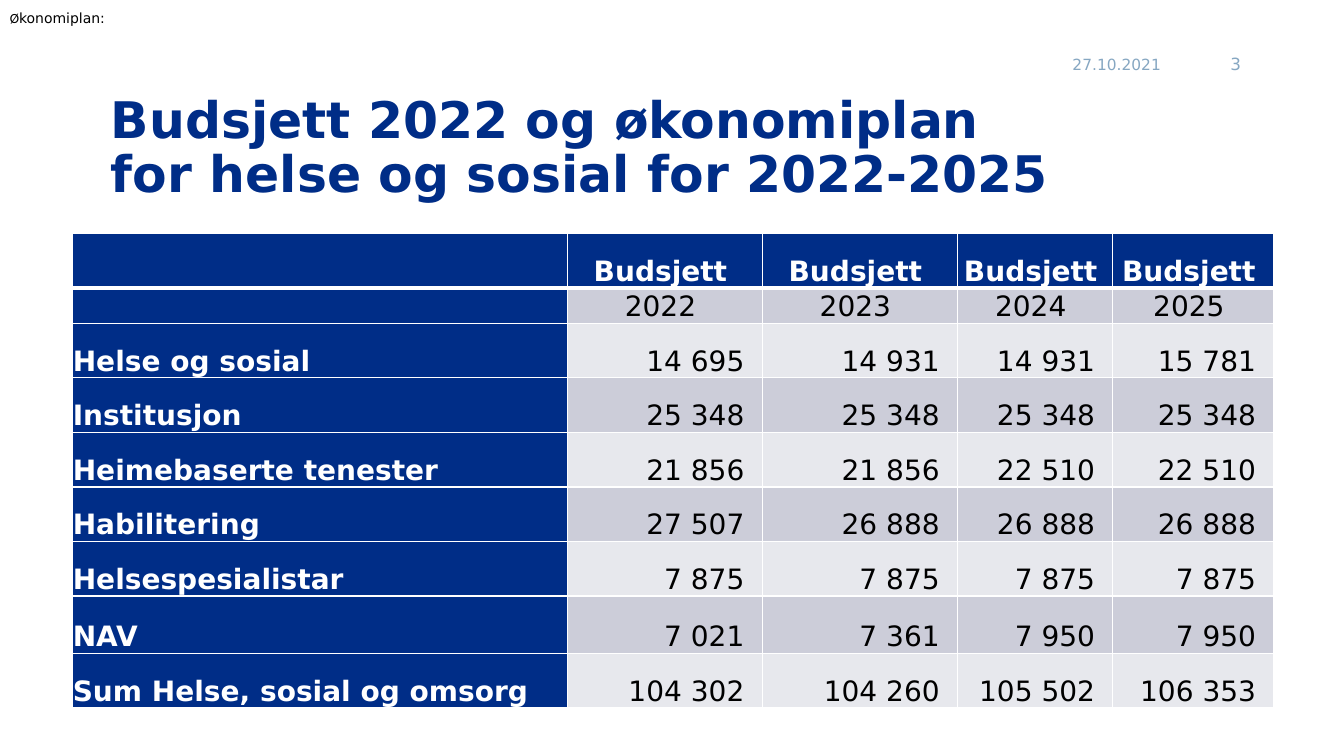
from lxml import etree
from pptx import Presentation
from pptx.dml.color import RGBColor
from pptx.enum import text as t
from pptx.oxml import ns
from pptx.util import Pt

NAVY, WHITE, BLACK, PALE_BLUE = "002D87", "FFFFFF", "000000", "86A7C2"
BANDS = ["E7E8ED", "CCCDD9"]
FONT = "DejaVu Sans"
LEFT, CENTER, RIGHT = t.PP_ALIGN.LEFT, t.PP_ALIGN.CENTER, t.PP_ALIGN.RIGHT


def style(paragraph, size, color, bold=False, align=LEFT):
    paragraph.alignment = align
    for run in paragraph.runs:
        run.font.name = FONT
        run.font.size = Pt(size)
        run.font.bold = bold
        run.font.color.rgb = RGBColor.from_string(color)


def add_border(cell, side, width):
    """Draw a white border on one side (L, R, T or B); call before filling the cell."""
    properties = cell._tc.get_or_add_tcPr()
    line = etree.SubElement(properties, ns.qn(f"a:ln{side}"), w=str(Pt(width)))
    fill = etree.SubElement(line, ns.qn("a:solidFill"))
    etree.SubElement(fill, ns.qn("a:srgbClr"), val=WHITE)


presentation = Presentation()
presentation.slide_width, presentation.slide_height = Pt(960), Pt(540)
slide = presentation.slides.add_slide(presentation.slide_layouts[5])

# Title
title = slide.shapes.title
title.left, title.top, title.width, title.height = Pt(72), Pt(54), Pt(822), Pt(105)
title.text_frame.text = "Budsjett 2022 og økonomiplan for\u00a0helse og sosial for 2022-2025"
title.text_frame.auto_size = t.MSO_AUTO_SIZE.NONE
title.text_frame.vertical_anchor = t.MSO_ANCHOR.MIDDLE
title.text_frame.paragraphs[0].line_spacing = 0.9
style(title.text_frame.paragraphs[0], 36, NAVY, bold=True)

# Budget table
budget = [
    ["", "Budsjett", "Budsjett", "Budsjett", "Budsjett"],
    ["", "2022", "2023", "2024", "2025"],
    ["Helse og sosial", "14 695", "14 931", "14 931", "15 781"],
    ["Institusjon", "25 348", "25 348", "25 348", "25 348"],
    ["Heimebaserte tenester", "21 856", "21 856", "22 510", "22 510"],
    ["Habilitering", "27 507", "26 888", "26 888", "26 888"],
    ["Helsespesialistar", "7 875", "7 875", "7 875", "7 875"],
    ["NAV", "7 021", "7 361", "7 950", "7 950"],
    ["Sum Helse, sosial og omsorg", "104 302", "104 260", "105 502", "106 353"],
]
column_widths = [353.5, 139, 139.5, 111, 115]
row_heights = [39, 24.5, 39, 39, 39, 39, 39, 41, 39]
frame = slide.shapes.add_table(len(budget), len(column_widths), Pt(52), Pt(167),
                               Pt(sum(column_widths)), Pt(sum(row_heights)))
table = frame.table
for column, width in zip(table.columns, column_widths):
    column.width = Pt(width)
for row, height in zip(table.rows, row_heights):
    row.height = Pt(height)

for r, values in enumerate(budget):
    for c, value in enumerate(values):
        cell = table.cell(r, c)
        is_heading = r == 0 or c == 0
        for side in "LRTB":
            below_header = (r, side) in [(0, "B"), (1, "T")]
            add_border(cell, side, 3 if below_header else 1)
        cell.fill.solid()
        cell.fill.fore_color.rgb = RGBColor.from_string(NAVY if is_heading else BANDS[r % 2])
        cell.vertical_anchor = t.MSO_ANCHOR.BOTTOM
        cell.margin_left = cell.margin_top = cell.margin_bottom = 0
        if c == 0:
            align, margin = LEFT, 0
        elif r < 2:
            align, margin = CENTER, 6.4
        else:
            align, margin = RIGHT, 12.7
        cell.margin_right = Pt(margin)
        cell.text_frame.text = value
        paragraph = cell.text_frame.paragraphs[0]
        paragraph.line_spacing = 1.07
        paragraph.space_after = Pt(8)
        style(paragraph, 20, WHITE if is_heading else BLACK, is_heading, align)

# Date and slide number
for content, left, width, size, align in [
    ("27.10.2021", 759, 83, 11, LEFT),
    ("3", 852.5, 41, 12, RIGHT),
]:
    box = slide.shapes.add_textbox(Pt(left), Pt(18), Pt(width), Pt(55.5))
    box.text_frame.word_wrap = True
    box.text_frame.vertical_anchor = t.MSO_ANCHOR.MIDDLE
    box.text_frame.text = content
    style(box.text_frame.paragraphs[0], size, PALE_BLUE, align=align)

# Corner label
label = slide.shapes.add_textbox(0, 0, Pt(960), Pt(36))
label.text_frame.word_wrap = True
label.text_frame.margin_top = Pt(6.5)
paragraph = label.text_frame.paragraphs[0]
for part in ["Ø", "konomiplan:"]:
    paragraph.add_run().text = part
style(paragraph, 10, BLACK)
paragraph.runs[0].font.name = "Calibri"

presentation.save("out.pptx")
